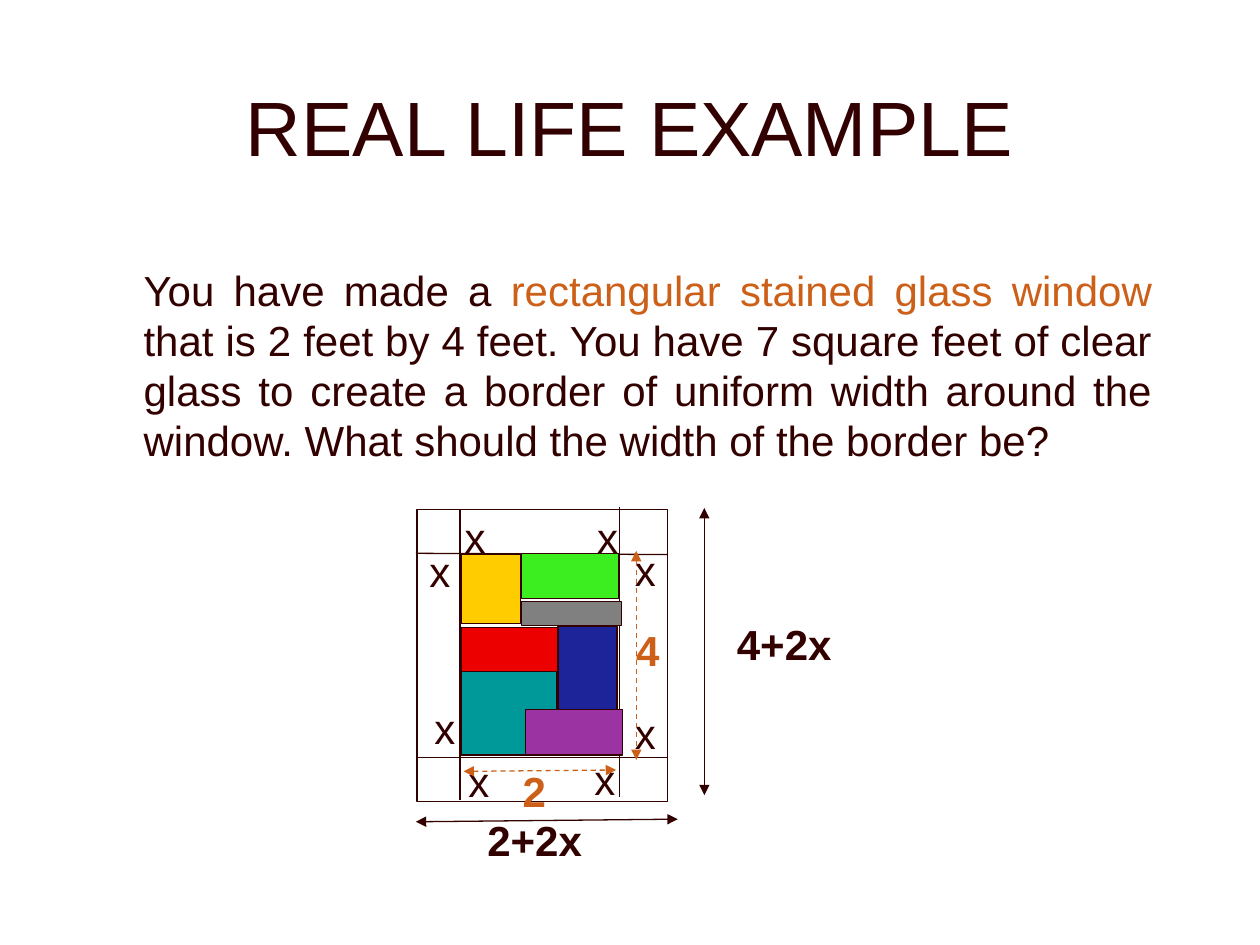
from lxml import etree
from pptx import Presentation
from pptx.dml.color import RGBColor
from pptx.enum.dml import MSO_LINE
from pptx.enum.shapes import MSO_CONNECTOR, MSO_SHAPE
from pptx.enum.text import MSO_ANCHOR, PP_ALIGN
from pptx.oxml.ns import qn
from pptx.util import Pt

STRAIGHT = MSO_CONNECTOR.STRAIGHT
RECTANGLE = MSO_SHAPE.RECTANGLE
DASH = MSO_LINE.DASH
MIDDLE = MSO_ANCHOR.MIDDLE
CENTER, JUSTIFY, LEFT = PP_ALIGN.CENTER, PP_ALIGN.JUSTIFY, PP_ALIGN.LEFT

TITLE, DARK, ORANGE = "320000", "330000", "CC6018"
LABEL_HEIGHT = 36
LINE_SPACING = 28.6

PROBLEM = [
    ("You have made a ", DARK),
    ("rectangular stained glass window", ORANGE),
    (" that is 2 feet by 4 feet. You have 7 square feet of clear glass to "
     "create a border of uniform width around the window. What should the "
     "width of the border be?", DARK),
]

# The positions below are relative to the top left of the outer border.
BORDER_LINES = [
    (24.5, 0, 24.5, 166.3),
    (115.9, -1.4, 115.9, 164.2),
    (0, 141.8, 143.3, 141.8),
    (-0.7, 25.2, 143.3, 25.9),
]
X_LABELS = [
    (20.2, -2.2), (95.8, -2.2), (0, 17.3), (117.4, 16.6),
    (2.9, 107.3), (22.3, 137.5), (94.3, 136.1), (117.4, 110.2),
]
# text, colour, label left, top and width, arrow ends, dash
DIMENSIONS = [
    ("2", ORANGE, (53.3, 143.3, 28), (26.6, 149.8, 113.8, 149), DASH),
    ("4", ORANGE, (118.1, 62.6, 28), (125.3, 23.8, 125.3, 143.3), DASH),
    ("4+2x", DARK, (175.7, 59, 68.4), (164.2, -0.7, 164.2, 163.4), None),
    ("2+2x", DARK, (33.1, 171.4, 68.4), (-0.7, 178.6, 149, 177.1), None),
]
PANES = [
    ("FFCC00", 25.2, 25.9, 33.8, 39.6),
    ("3CED20", 59.8, 25.2, 55.4, 25.9),
    ("ED0000", 25.2, 67.7, 55.4, 25.9),
    ("808080", 59.8, 52.6, 56.9, 13.7),
    ("1D2399", 80.6, 67, 33.8, 54.7),
    ("009999", 25.2, 92.9, 54.7, 47.5),
    ("9B33A3", 61.9, 114.5, 55.4, 25.9),
]


def rgb(value):
    return RGBColor.from_string(value)


def add_run(p, text, color, size=24, bold=False):
    r = p.add_run()
    r.text = text
    for name, value in dict(name="Arial", size=Pt(size), bold=bold).items():
        setattr(r.font, name, value)
    r.font.color.rgb = rgb(color)


def add_text(s, box, runs, align=LEFT, wrap=False, bold=False):
    tf = s.shapes.add_textbox(*map(Pt, box)).text_frame
    tf.word_wrap = wrap
    p = tf.paragraphs[0]
    p.alignment = align
    p.line_spacing = Pt(LINE_SPACING)
    for text, color in runs:
        add_run(p, text, color, bold=bold)


def add_line(s, left, top, ends, color=DARK, dash=None, arrows=False):
    x1, y1, x2, y2 = ends
    cn = s.shapes.add_connector(STRAIGHT, Pt(left + x1), Pt(top + y1),
                                Pt(left + x2), Pt(top + y2))
    cn.line.color.rgb = rgb(color)
    cn.line.width = Pt(0.75)
    if dash is not None:
        cn.line.dash_style = dash
    if arrows:
        ln = cn.line._get_or_add_ln()
        for tag in ("a:headEnd", "a:tailEnd"):
            etree.SubElement(ln, qn(tag), type="triangle")
    etree.SubElement(cn._element.spPr, qn("a:effectLst"))


def add_rectangle(s, box, fill=None):
    sp = s.shapes.add_shape(RECTANGLE, *map(Pt, box))
    sp.shadow.inherit = False
    if fill:
        sp.fill.solid()
        sp.fill.fore_color.rgb = rgb(fill)
    else:
        sp.fill.background()
    sp.line.color.rgb = rgb(DARK)
    sp.line.width = Pt(0.75)


def add_title(s, box, text):
    sp = s.shapes.title
    for name, value in zip(("left", "top", "width", "height"), box):
        setattr(sp, name, Pt(value))
    tf = sp.text_frame
    tf.vertical_anchor = MIDDLE
    p = tf.paragraphs[0]
    p.alignment = CENTER
    add_run(p, text, TITLE, size=44)


def add_window(s, box):
    """Draw the stained glass, its border and the dimensions."""
    left, top = box[:2]
    add_rectangle(s, box)
    for ends in BORDER_LINES:
        add_line(s, left, top, ends)
    for x, y in X_LABELS:
        add_text(s, (left + x, top + y, 26.6, LABEL_HEIGHT), [("x", DARK)])
    for text, color, (x, y, width), ends, dash in DIMENSIONS:
        add_text(s, (left + x, top + y, width, LABEL_HEIGHT),
                 [(text, color)], bold=True)
        add_line(s, left, top, ends, color, dash, arrows=True)
    for fill, x, y, width, height in PANES:
        add_rectangle(s, (left + x, top + y, width, height), fill)


def main():
    prs = Presentation()
    prs.slide_width, prs.slide_height = Pt(720), Pt(540)
    s = prs.slides.add_slide(prs.slide_layouts[5])
    add_title(s, (54, 27, 612, 90), "REAL LIFE EXAMPLE")
    add_text(s, (75, 147.6, 590.4, 122.4), PROBLEM, JUSTIFY, wrap=True)
    add_window(s, (238.3, 291, 143.3, 167))
    prs.save("out.pptx")


if __name__ == "__main__":
    main()
